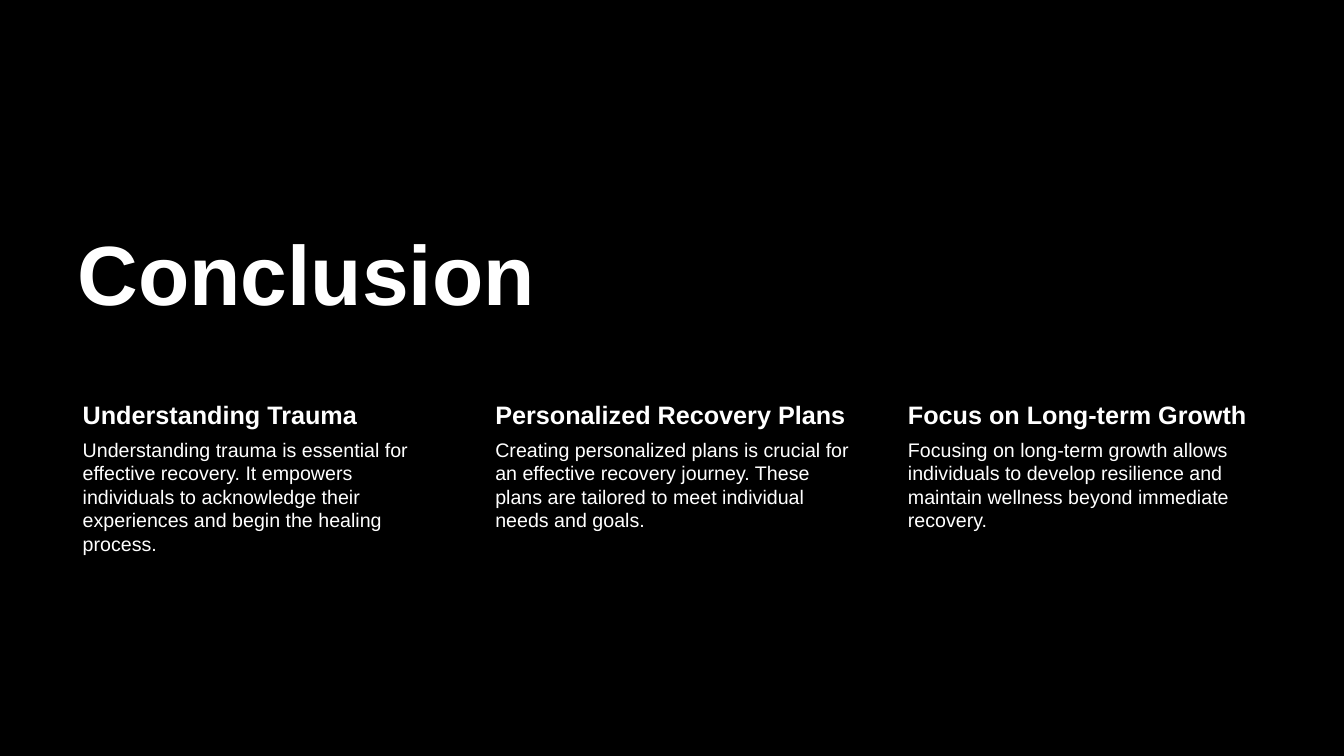
"""Build the closing slide: a large title above three takeaway columns."""
from dataclasses import dataclass

from pptx import Presentation
from pptx import util as u
from pptx.dml import color
from pptx.enum import text

COLOURS = {"background": "000000", "text": "FFFFFF"}
WIDTH, HEIGHT = u.Inches(13.333), u.Inches(7.5)

COLUMN_LEFT, COLUMN_PITCH, COLUMN_WIDTH = 5.03, 30.7, 27.9


@dataclass(frozen=True)
class Row:
    top: float
    height: float
    inset: float
    font: dict


@dataclass(frozen=True)
class Takeaway:
    heading: str
    body: str


TITLE_FONT = {"name": "Arial", "size": u.Pt(60), "bold": True}
HEADING_ROW = Row(52.4, 5.2, 0.03, {"name": "Arial", "size": u.Pt(18), "bold": True})
BODY_ROW = Row(57.6, 31.07, 0.02, {"name": "Arial", "size": u.Pt(14), "bold": False})

TAKEAWAYS = [
    Takeaway(
        "Understanding Trauma",
        "Understanding trauma is essential for effective recovery. It empowers "
        "individuals to acknowledge their experiences and begin the healing process.",
    ),
    Takeaway(
        "Personalized Recovery Plans",
        "Creating personalized plans is crucial for an effective recovery journey. "
        "These plans are tailored to meet individual needs and goals.",
    ),
    Takeaway(
        "Focus on Long-term Growth",
        "Focusing on long-term growth allows individuals to develop resilience and "
        "maintain wellness beyond immediate recovery.",
    ),
]


def place(left: float, top: float, width: float, height: float) -> dict:
    """Turn percentages of the slide into position attributes."""
    return {
        "left": round(WIDTH * left / 100),
        "top": round(HEIGHT * top / 100),
        "width": round(WIDTH * width / 100),
        "height": round(HEIGHT * height / 100),
    }


def apply(target, values: dict) -> None:
    """Set every named attribute on the target."""
    for name, value in values.items():
        setattr(target, name, value)


def write(shape, words: str, font: dict, frame: dict, layout: dict) -> None:
    """Fill a shape with one formatted paragraph."""
    apply(shape.text_frame, {"text": words, "word_wrap": True,
                             "auto_size": text.MSO_AUTO_SIZE.NONE, **frame})
    paragraph = shape.text_frame.paragraphs[0]
    apply(paragraph, {"alignment": text.PP_ALIGN.LEFT, **layout})
    run = paragraph.runs[0]
    apply(run.font, font)
    run.font.color.rgb = color.RGBColor.from_string(COLOURS["text"])


def add_cell(shapes, column: int, row: Row, words: str) -> None:
    """Add one text box of the takeaway grid."""
    left = COLUMN_LEFT + column * COLUMN_PITCH
    box = shapes.add_textbox(**place(left, row.top, COLUMN_WIDTH, row.height))
    edges = dict.fromkeys(("margin_top", "margin_right", "margin_bottom"), u.Inches(row.inset))
    write(box, words, row.font, {"margin_left": u.Inches(0.15), **edges}, {})


def main() -> None:
    """Create the presentation and save it."""
    presentation = Presentation()
    apply(presentation, {"slide_width": WIDTH, "slide_height": HEIGHT})
    slide = presentation.slides.add_slide(presentation.slide_layouts.get_by_name("Title Only"))
    fill = slide.background.fill
    fill.solid()
    fill.fore_color.rgb = color.RGBColor.from_string(COLOURS["background"])

    title = slide.shapes.title
    apply(title, place(COLUMN_LEFT, 26.93, 60.23, 16.53))
    write(title, "Conclusion", TITLE_FONT,
          {"vertical_anchor": text.MSO_ANCHOR.BOTTOM}, {"line_spacing": 0.9})

    group = slide.shapes.add_group_shape()
    for column, takeaway in enumerate(TAKEAWAYS):
        add_cell(group.shapes, column, HEADING_ROW, takeaway.heading)
        add_cell(group.shapes, column, BODY_ROW, takeaway.body)

    presentation.save("out.pptx")


if __name__ == "__main__":
    main()
